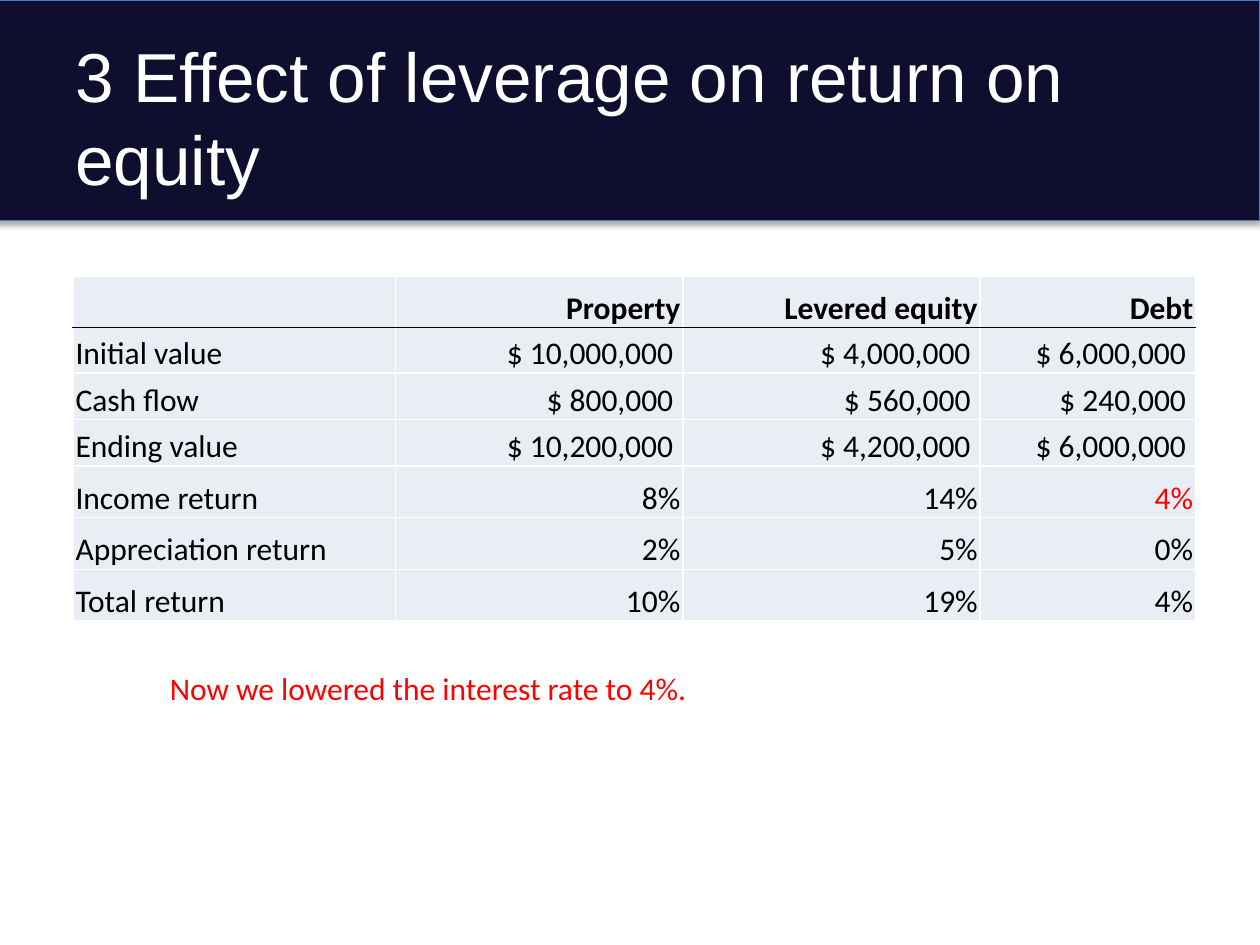
"""Build a slide on how leverage changes the return on equity."""
import pptx
import pptx.dml.color
import pptx.enum.shapes
import pptx.enum.text
import pptx.oxml
import pptx.oxml.ns
import pptx.util

Inches = pptx.util.Inches
Pt = pptx.util.Pt
RGBColor = pptx.dml.color.RGBColor
ALIGN = pptx.enum.text.PP_ALIGN
ANCHOR = pptx.enum.text.MSO_ANCHOR

WIDTH, HEIGHT = 10, 7.5
NAVY = RGBColor(0x10, 0x0E, 0x2F)
BLUE = RGBColor(0x4B, 0x7E, 0xBC)
PALE = RGBColor(0xE9, 0xED, 0xF4)
WHITE = RGBColor(0xFF, 0xFF, 0xFF)
BLACK = RGBColor(0, 0, 0)
RED = RGBColor(0xFF, 0, 0)

COLUMNS = [2.56, 2.28, 2.36, 1.71]
ROW_HEIGHTS = [0.41, 0.36, 0.37, 0.37, 0.41, 0.41, 0.41]
ROWS = [
    ["", "Property", "Levered equity", "Debt"],
    ["Initial value", "$ 10,000,000 ", "$ 4,000,000 ", "$ 6,000,000 "],
    ["Cash flow", "$ 800,000 ", "$ 560,000 ", "$ 240,000 "],
    ["Ending value", "$ 10,200,000 ", "$ 4,200,000 ", "$ 6,000,000 "],
    ["Income return", "8%", "14%", "4%"],
    ["Appreciation return", "2%", "5%", "0%"],
    ["Total return", "10%", "19%", "4%"],
]
CHANGED_CELL = (4, 3)


def add_run(p, text, size, color, font="Calibri", bold=False):
    """Add one formatted run to a paragraph."""
    r = p.add_run()
    r.text = text
    r.font.size = Pt(size)
    r.font.name = font
    r.font.bold = bold
    r.font.color.rgb = color


def add_text(s, box, text, size, color, font="Calibri", anchor=ANCHOR.TOP):
    """Add a wrapping text box with one run."""
    tf = s.shapes.add_textbox(*map(Inches, box)).text_frame
    tf.word_wrap = True
    tf.vertical_anchor = anchor
    add_run(tf.paragraphs[0], text, size, color, font)


def add_banner(s):
    """Add the dark title band with a soft shadow below it."""
    box = map(Inches, (-0.04, 0, WIDTH + 0.04, 1.75))
    sp = s.shapes.add_shape(pptx.enum.shapes.MSO_SHAPE.RECTANGLE, *box)
    sp.fill.solid()
    sp.fill.fore_color.rgb = NAVY
    sp.line.color.rgb = BLUE
    sp.line.width = Pt(0.75)
    sp.shadow.inherit = False
    effects = sp._element.spPr.find(pptx.oxml.ns.qn("a:effectLst"))
    effects.append(pptx.oxml.parse_xml(
        f'<a:outerShdw {pptx.oxml.ns.nsdecls("a")} blurRad="{Pt(3.1)}" '
        f'dist="{Pt(1.8)}" dir="5400000" rotWithShape="0">'
        '<a:srgbClr val="000000"><a:alpha val="35000"/></a:srgbClr>'
        '</a:outerShdw>'))


def set_borders(cell, top, bottom):
    """Draw 1 pt borders, white at the sides."""
    tc_pr = cell._tc.get_or_add_tcPr()
    for side, color in zip("LRTB", (WHITE, WHITE, top, bottom)):
        tc_pr.append(pptx.oxml.parse_xml(
            f'<a:ln{side} {pptx.oxml.ns.nsdecls("a")} w="{Pt(1)}">'
            f'<a:solidFill><a:srgbClr val="{color}"/></a:solidFill>'
            f'</a:ln{side}>'))


def fill_cell(cell, row, col, text):
    """Format one table cell and write its text."""
    set_borders(cell, BLACK if row == 1 else WHITE, BLACK if row == 0 else WHITE)
    cell.fill.solid()
    cell.fill.fore_color.rgb = PALE
    cell.margin_left = cell.margin_right = cell.margin_top = Inches(0.02)
    cell.margin_bottom = 0
    cell.vertical_anchor = ANCHOR.BOTTOM
    p = cell.text_frame.paragraphs[0]
    p.alignment = ALIGN.RIGHT if col else ALIGN.LEFT
    p.font.size = Pt(18)
    if text:
        color = RED if (row, col) == CHANGED_CELL else BLACK
        add_run(p, text, 18, color, bold=row == 0)


def add_returns_table(s):
    """Add the table of values and returns."""
    box = map(Inches, (0.58, 2.19, sum(COLUMNS), sum(ROW_HEIGHTS)))
    table = s.shapes.add_table(len(ROWS), len(COLUMNS), *box).table
    for column, width in zip(table.columns, COLUMNS):
        column.width = Inches(width)
    for i, (height, texts) in enumerate(zip(ROW_HEIGHTS, ROWS)):
        table.rows[i].height = Inches(height)
        for j, text in enumerate(texts):
            fill_cell(table.cell(i, j), i, j, text)


def main():
    """Build and save the slide."""
    prs = pptx.Presentation()
    prs.slide_width, prs.slide_height = Inches(WIDTH), Inches(HEIGHT)
    s = prs.slides.add_slide(prs.slide_layouts[6])
    add_banner(s)
    add_text(s, (0.05 * WIDTH, 0.04 * HEIGHT, 0.9 * WIDTH, 1.25),
             "3 Effect of leverage on return on equity", 39.6, WHITE,
             "Arial", ANCHOR.MIDDLE)
    add_returns_table(s)
    add_text(s, (1.25, 5.26, 5.07, 0.4),
             "Now we lowered the interest rate to 4%.", 18, RED)
    prs.save("out.pptx")


if __name__ == "__main__":
    main()
